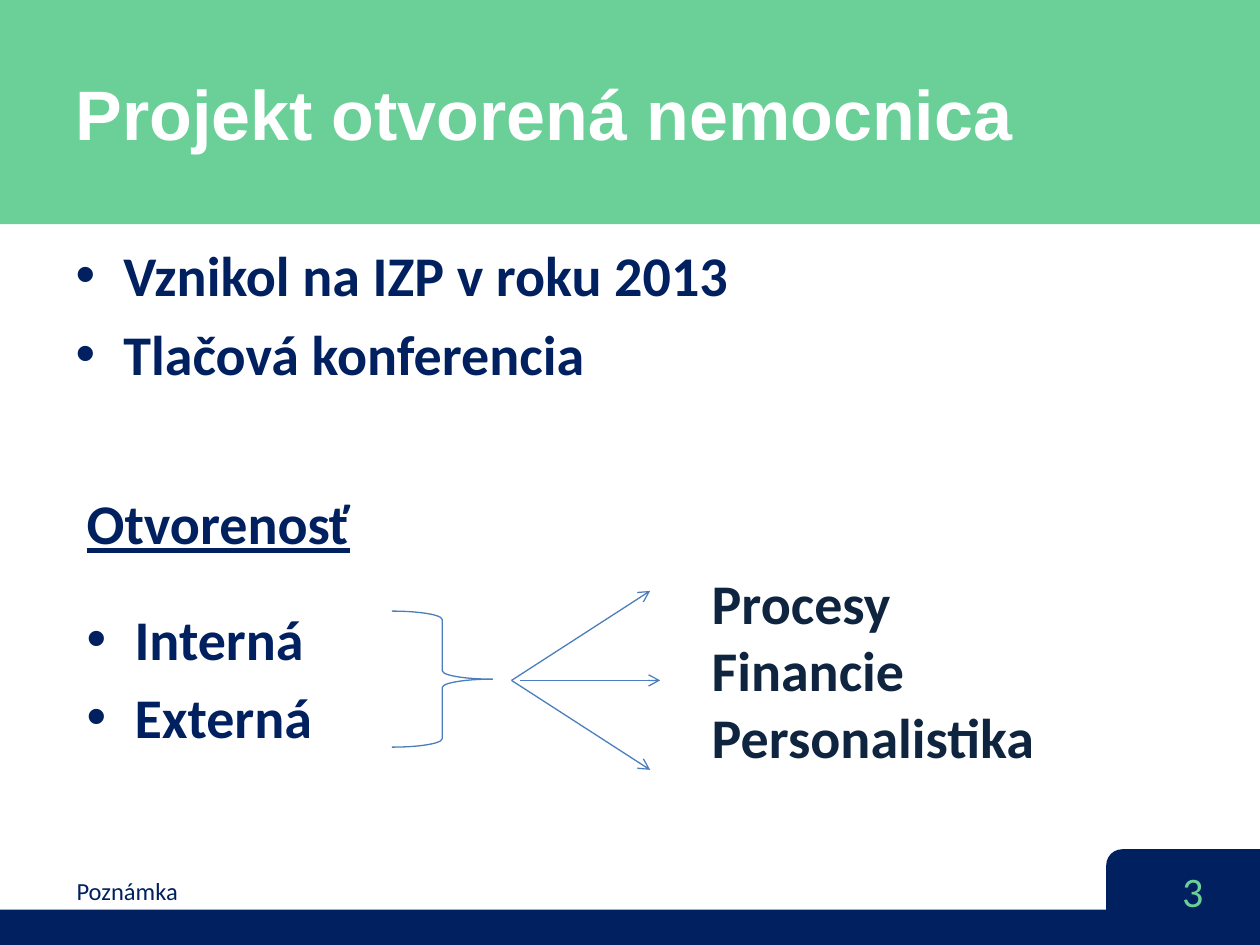
from pptx import Presentation
from pptx.dml.color import RGBColor
from pptx.enum.shapes import MSO_CONNECTOR, MSO_SHAPE
from pptx.enum.text import MSO_ANCHOR, MSO_AUTO_SIZE, PP_ALIGN
from pptx.oxml.ns import qn
from pptx.util import Inches, Pt
from lxml import etree

NAVY, GREEN, BLUE, DARK, WHITE = "002060", "6AD098", "4B7EBC", "0F243E", "FFFFFF"


def paint(color, value):
    color.rgb = RGBColor.from_string(value)


def write(frame, lines, size, color, bold=False, font="Calibri", align=PP_ALIGN.LEFT):
    """Fill a frame with (text, bullet, space before) lines; return the runs."""
    frame.auto_size = MSO_AUTO_SIZE.NONE
    runs = []
    for i, (text, bullet, space) in enumerate(lines):
        para = frame.paragraphs[0] if i == 0 else frame.add_paragraph()
        para.alignment = align
        para.space_before = Pt(space)
        if bullet:
            props = para._p.get_or_add_pPr()
            props.set("marL", str(Inches(0.38)))
            props.set("indent", str(-Inches(0.38)))
            etree.SubElement(props, qn("a:buFont")).set("typeface", "Arial")
            etree.SubElement(props, qn("a:buChar")).set("char", "•")
        run = para.add_run()
        run.text = text
        run.font.name, run.font.size, run.font.bold = font, Pt(size), bold
        paint(run.font.color, color)
        runs.append(run)
    return runs


deck = Presentation()
deck.slide_width, deck.slide_height = Inches(10), Inches(7.5)
slide = deck.slides.add_slide(deck.slide_layouts[1])
shapes = slide.shapes
title, body = slide.placeholders

# Header band, footer bar and page tab
bands = [
    (MSO_SHAPE.RECTANGLE, 0, 7.22, 10, 0.28, NAVY),
    (MSO_SHAPE.ROUND_1_RECTANGLE, 8.78, 6.74, 1.22, 0.76, NAVY),
    (MSO_SHAPE.RECTANGLE, 0, 0, 10, 1.78, GREEN),
]
for i, (kind, x, y, w, h, color) in enumerate(bands):
    band = shapes.add_shape(kind, Inches(x), Inches(y), Inches(w), Inches(h))
    band.shadow.inherit = False
    band.fill.solid()
    paint(band.fill.fore_color, color)
    band.line.fill.background()
    if kind == MSO_SHAPE.ROUND_1_RECTANGLE:
        band._element.spPr.find(qn("a:xfrm")).set("flipH", "1")
    # Keep the bands behind the placeholders
    shapes._spTree.insert(2 + i, band._element)

# Title
title.left, title.top, title.width, title.height = 0, 0, Inches(9), Inches(1.78)
title.left = Inches(0.5)
title.text_frame.vertical_anchor = MSO_ANCHOR.MIDDLE
write(title.text_frame, [("Projekt otvorená nemocnica", False, 0)], 40, WHITE, True, "Arial")

# Opening list
body.left, body.top, body.width, body.height = Inches(0.5), Inches(1.86), Inches(9), Inches(1.73)
items = [("Vznikol na IZP v roku 2013", True, 0), ("Tlačová konferencia", True, 6.4)]
write(body.text_frame, items, 32, NAVY, True)

# Page number, footer note, openness list and areas
kinds = [("Otvorenosť", False, 0), ("Interná", True, 27.7), ("Externá", True, 6.4)]
areas = [(name, False, 0) for name in ("Procesy", "Financie", "Personalistika")]
texts = [
    (7.68, 6.82, 1.97, 0.5, [("3", False, 0)], 24, GREEN, False, PP_ALIGN.RIGHT),
    (0.51, 6.9, 8.03, 0.34, [("Poznámka", False, 0)], 14, NAVY, False, PP_ALIGN.LEFT),
    (0.59, 3.83, 2.6, 2.23, kinds, 32, NAVY, True, PP_ALIGN.LEFT),
    (5.55, 4.46, 2.79, 1.72, areas, 32, DARK, True, PP_ALIGN.LEFT),
]
for x, y, w, h, lines, size, color, bold, align in texts:
    box = shapes.add_textbox(Inches(x), Inches(y), Inches(w), Inches(h))
    box.text_frame.word_wrap = lines is not areas
    runs = write(box.text_frame, lines, size, color, bold, align=align)
    if lines is kinds:
        runs[0].font.underline = True

# Brace
brace = shapes.add_shape(
    MSO_SHAPE.RIGHT_BRACE, Inches(3.11), Inches(4.85), Inches(0.8), Inches(1.08))
brace.shadow.inherit = False
brace.fill.background()
paint(brace.line.color, BLUE)
brace.line.width = Pt(0.75)

# Arrows fanning out to the areas
for start, end, rise in [(4.06, 5.16, -0.71), (4.13, 5.24, 0), (4.06, 5.16, 0.71)]:
    arrow = shapes.add_connector(
        MSO_CONNECTOR.STRAIGHT, Inches(start), Inches(5.4), Inches(end), Inches(5.4 + rise))
    paint(arrow.line.color, BLUE)
    arrow.line.width = Pt(0.75)
    etree.SubElement(arrow.line._get_or_add_ln(), qn("a:tailEnd")).set("type", "arrow")
    etree.SubElement(arrow._element.spPr, qn("a:effectLst"))

deck.save("out.pptx")
